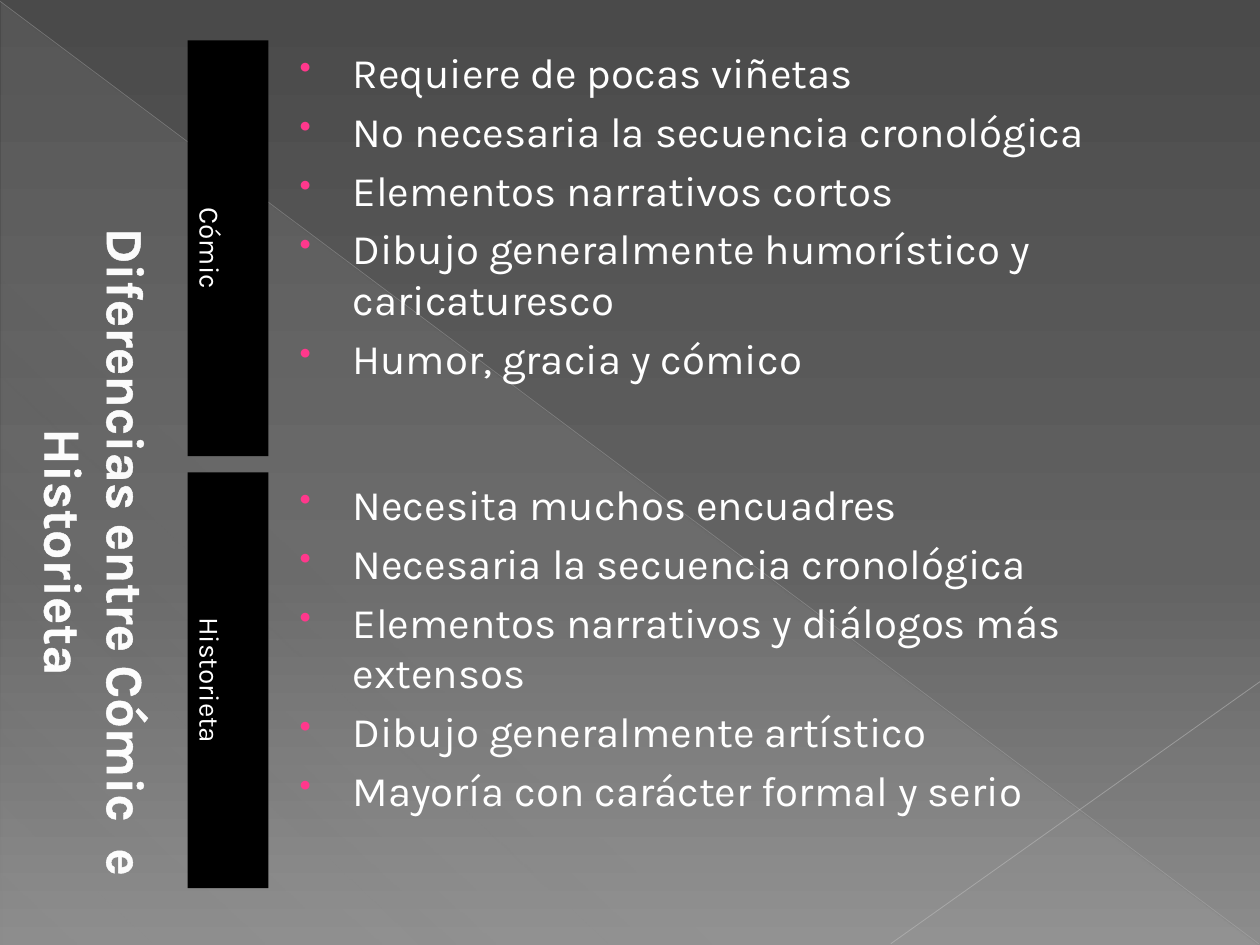
import lxml.etree
import pptx
import pptx.dml.color
import pptx.enum.shapes
import pptx.enum.text
import pptx.oxml
import pptx.oxml.ns
import pptx.util

Inches = pptx.util.Inches
RGBColor = pptx.dml.color.RGBColor
Align = pptx.enum.text.PP_ALIGN
Anchor = pptx.enum.text.MSO_ANCHOR
qn = pptx.oxml.ns.qn

WHITE = RGBColor(0xFF, 0xFF, 0xFF)
BLACK = RGBColor(0, 0, 0)
PINK = RGBColor(0xFF, 0x38, 0x8C)
DARK = RGBColor(0x4A, 0x4A, 0x4A)
MIDDLE = RGBColor(0x62, 0x62, 0x62)
LIGHT = RGBColor(0x8C, 0x8C, 0x8C)
PALE = RGBColor(0xD2, 0xD2, 0xD2)
RULE = RGBColor(0xBF, 0xBF, 0xBF)
CORNER_RULE = RGBColor(0xC6, 0xC6, 0xC6)

FONT = "Karla"
WIDTH, HEIGHT = 10, 7.5
TOP, ROW_HEIGHT, ROW_GAP = 0.32, 3.3, 0.13
TITLE_LEFT, TITLE_WIDTH = 0.27, 1.17
LABEL_LEFT, LABEL_WIDTH = 1.49, 0.64
LIST_LEFT, LIST_WIDTH = 2.21, 7.5

SECTIONS = [
    ("Cómic", [
        "Requiere de pocas viñetas",
        "No necesaria la secuencia cronológica",
        "Elementos narrativos cortos",
        "Dibujo generalmente humorístico y caricaturesco",
        "Humor, gracia y cómico",
    ]),
    ("Historieta", [
        "Necesita muchos encuadres",
        "Necesaria la secuencia cronológica",
        "Elementos narrativos y diálogos más extensos",
        "Dibujo generalmente artístico",
        "Mayoría con carácter formal y serio",
    ]),
]


def add_child(parent, tag, **attributes):
    child = lxml.etree.SubElement(parent, qn(tag))
    for name, value in attributes.items():
        child.set(name, str(value))
    return child


def add_color(parent, color, opacity=100):
    element = add_child(parent, "a:srgbClr", val=color)
    if opacity < 100:
        add_child(element, "a:alpha", val=opacity * 1000)


def set_gradient(fill, parent, stops, angle):
    fill.gradient()
    fill.gradient_angle = 360 - angle
    stop_list = next(parent.iter(qn("a:gsLst")))
    for stop in list(stop_list):
        stop_list.remove(stop)
    for position, color, opacity in stops:
        add_color(add_child(stop_list, "a:gs", pos=position * 1000), color, opacity)


def write_text(paragraph, text, size=24, bold=False, align=Align.LEFT,
               before=0, margin=0, indent=0, bullet=None, outline=None):
    paragraph.alignment = align
    paragraph.space_before = pptx.util.Pt(before)
    properties = paragraph._p.get_or_add_pPr()
    properties.set("marL", str(Inches(margin)))
    properties.set("indent", str(Inches(indent)))
    if bullet:
        add_color(add_child(properties, "a:buClr"), PINK)
        add_child(properties, "a:buSzPct", val=80000)
        add_child(properties, "a:buChar", char=bullet)
    run = paragraph.add_run()
    run.text = text
    font = run.font
    font.name, font.size, font.bold = FONT, pptx.util.Pt(size), bold
    font.color.rgb = WHITE
    if outline:
        line = pptx.oxml.parse_xml(f'<a:ln {pptx.oxml.ns.nsdecls("a")}/>')
        line.set("w", str(pptx.util.Pt(outline)))
        add_color(add_child(line, "a:solidFill"), WHITE)
        font._element.insert(0, line)


def set_frame(frame, anchor, inset, vertical=False):
    frame.word_wrap = True
    frame.auto_size = pptx.enum.text.MSO_AUTO_SIZE.NONE
    frame.vertical_anchor = anchor
    frame.margin_left = frame.margin_right = Inches(inset)
    frame.margin_top = frame.margin_bottom = Inches(min(inset, 0.05))
    if vertical:
        frame._txBody.bodyPr.set("vert", "vert")


def add_rule(slide, start, end, color, width, opacity):
    connector = slide.shapes.add_connector(
        pptx.enum.shapes.MSO_CONNECTOR.STRAIGHT,
        *(Inches(value) for value in (*start, *end)))
    connector.line.color.rgb = color
    connector.line.width = pptx.util.Pt(width)
    add_child(next(connector._element.iter(qn("a:srgbClr"))), "a:alpha", val=opacity * 1000)
    add_child(connector._element.spPr, "a:effectLst")


def draw_backdrop(slide):
    set_gradient(slide.background.fill, slide._element,
                 [(0, DARK, 100), (60, MIDDLE, 100), (100, LIGHT, 100)], 90)
    triangle = slide.shapes.add_shape(
        pptx.enum.shapes.MSO_SHAPE.RIGHT_TRIANGLE,
        Inches(0.01), Inches(0.02), Inches(9.98), Inches(7.48))
    triangle.shadow.inherit = False
    triangle.line.fill.background()
    set_gradient(triangle.fill, triangle._element.spPr,
                 [(0, PALE, 10), (70, PALE, 8), (100, PALE, 1)], 133)
    add_rule(slide, (0, 0.01), (9.99, 7.49), RULE, 0.39, 35)
    add_rule(slide, (WIDTH, 5.41), (7.07, 7.49), CORNER_RULE, 0.47, 45)


def place_title(slide, left, top, width, height):
    title = slide.shapes.title
    title.left = Inches(left + (width - height) / 2)
    title.top = Inches(top + (height - width) / 2)
    title.width, title.height = Inches(height), Inches(width)
    title.rotation = 90
    set_frame(title.text_frame, Anchor.BOTTOM, 0)
    write_text(title.text_frame.paragraphs[0], "Diferencias entre Cómic  e Historieta",
               size=29.7, bold=True, align=Align.CENTER, margin=1.39, outline=0.5)


def add_label(slide, text, left, top, width, height):
    label = slide.shapes.add_shape(
        pptx.enum.shapes.MSO_SHAPE.RECTANGLE,
        Inches(left), Inches(top), Inches(width), Inches(height))
    label.shadow.inherit = False
    label.fill.solid()
    label.fill.fore_color.rgb = BLACK
    label.line.fill.background()
    set_frame(label.text_frame, Anchor.BOTTOM, 0.05, vertical=True)
    write_text(label.text_frame.paragraphs[0], text, size=16, align=Align.CENTER)


def add_list(slide, items, left, top, width, height):
    frame = slide.shapes.add_textbox(
        Inches(left), Inches(top), Inches(width), Inches(height)).text_frame
    set_frame(frame, Anchor.TOP, 0.1)
    for index, item in enumerate(items):
        paragraph = frame.add_paragraph() if index else frame.paragraphs[0]
        write_text(paragraph, item, before=4.8, margin=0.49, indent=-0.42, bullet="•")


def main():
    presentation = pptx.Presentation()
    presentation.slide_width, presentation.slide_height = Inches(WIDTH), Inches(HEIGHT)
    slide = presentation.slides.add_slide(presentation.slide_layouts[5])
    draw_backdrop(slide)
    place_title(slide, TITLE_LEFT, TOP, TITLE_WIDTH, 2 * ROW_HEIGHT + ROW_GAP)
    for row, (label, items) in enumerate(SECTIONS):
        top = TOP + row * (ROW_HEIGHT + ROW_GAP)
        add_label(slide, label, LABEL_LEFT, top, LABEL_WIDTH, ROW_HEIGHT)
        add_list(slide, items, LIST_LEFT, top, LIST_WIDTH, ROW_HEIGHT)
    presentation.save("out.pptx")


if __name__ == "__main__":
    main()
